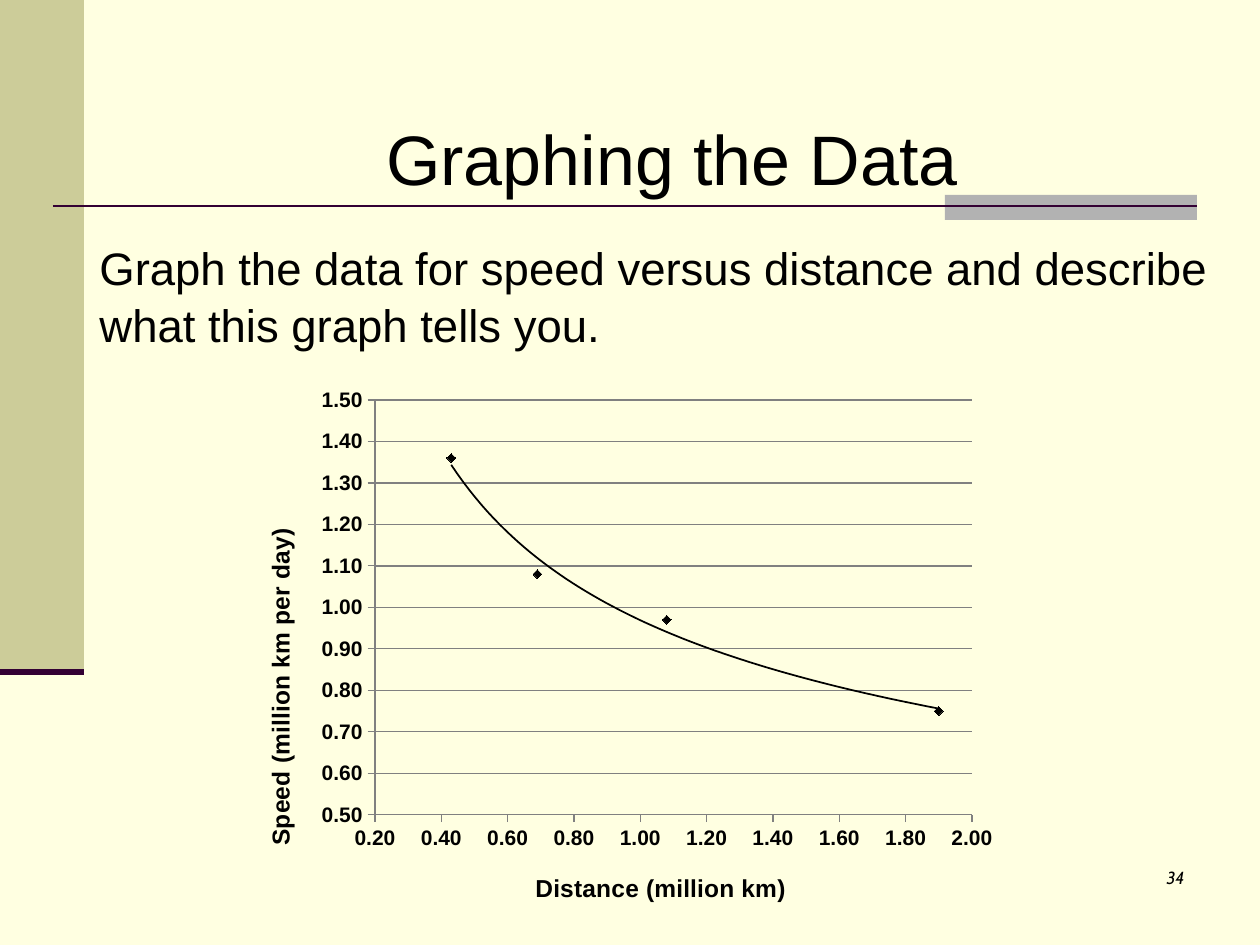
from lxml import etree
from pptx import Presentation
from pptx.chart.data import XyChartData
from pptx.dml.color import RGBColor
from pptx.enum.chart import XL_CHART_TYPE, XL_MARKER_STYLE, XL_TICK_MARK
from pptx.enum.shapes import MSO_CONNECTOR, MSO_SHAPE
from pptx.enum.text import MSO_ANCHOR, PP_ALIGN
from pptx.oxml.ns import qn
from pptx.util import Pt

PX = 914400 // 126
CREAM = RGBColor(0xFF, 0xFF, 0xE1)
KHAKI = RGBColor(0xCC, 0xCC, 0x99)
SILVER = RGBColor(0xB2, 0xB2, 0xB2)
PLUM = RGBColor(0x33, 0x00, 0x33)
GRAY = RGBColor(0x80, 0x80, 0x80)
BLACK = RGBColor(0, 0, 0)
LEFT, CENTER, RIGHT = PP_ALIGN.LEFT, PP_ALIGN.CENTER, PP_ALIGN.RIGHT
TOP, MIDDLE = MSO_ANCHOR.TOP, MSO_ANCHOR.MIDDLE

# Boxes are left, top, width, height in px
BARS = [((0, 0, 84, 672), KHAKI), ((945, 195, 252, 25), SILVER)]
RULES = [((53, 206), (1197, 206), 1.5), ((0, 672), (84, 672), 3.5)]
TEXTS = [
    ("34", (935, 861, 262, 63), RIGHT, TOP, 1,
     dict(name="Cabin", size=Pt(10), italic=True)),
    ("Graph the data for speed versus distance and describe what this graph tells you.",
     (87, 231, 1142, 147), LEFT, TOP, 1.05, dict(name="Arial", size=Pt(26))),
    ("Graphing the Data", (84, 95, 1176, 126), CENTER, MIDDLE, 1,
     dict(name="Arial", size=Pt(40))),
]

CHART_BOX = (242, 378, 766, 546)
PLOT_BOX = (375, 400, 597, 415)
POINTS = [(0.43, 1.36), (0.69, 1.08), (1.08, 0.97), (1.9, 0.75)]
X_AXIS = dict(minimum_scale=0.2, maximum_scale=2, major_unit=0.2,
              has_major_gridlines=False)
Y_AXIS = dict(minimum_scale=0.5, maximum_scale=1.5, major_unit=0.1,
              has_major_gridlines=True)
X_TITLE = ("Distance (million km)", (531, 868))
Y_TITLE = ("Speed (million km per day)", (260, 524))


def emu(values):
    return [v * PX for v in values]


def set_all(obj, values):
    for name, value in values.items():
        setattr(obj, name, value)


def add_bar(slide, box, color):
    s = slide.shapes.add_shape(MSO_SHAPE.RECTANGLE, *emu(box))
    s.shadow.inherit = False
    s.fill.solid()
    s.fill.fore_color.rgb = color
    s.line.fill.background()


def add_rule(slide, start, end, width):
    c = slide.shapes.add_connector(MSO_CONNECTOR.STRAIGHT, *emu(start + end))
    c.line.color.rgb = PLUM
    c.line.width = Pt(width)
    etree.SubElement(c._element.spPr, qn("a:effectLst"))


def add_text(slide, text, box, align, anchor, spacing, font):
    tf = slide.shapes.add_textbox(*emu(box)).text_frame
    set_all(tf, dict(word_wrap=True, vertical_anchor=anchor))
    p = tf.paragraphs[0]
    set_all(p, dict(alignment=align, line_spacing=spacing))
    r = p.add_run()
    r.text = text
    set_all(r.font, font)
    r.font.color.rgb = BLACK


def place(element, box, index):
    """Fix a chart part at a px box (or corner) given on the slide."""
    layout = element.find(qn("c:layout"))
    if layout is None:
        layout = etree.Element(qn("c:layout"))
        element.insert(index, layout)
    manual = etree.SubElement(layout, qn("c:manualLayout"))
    left, top, width, height = CHART_BOX
    values = {"xMode": "edge", "yMode": "edge",
              "x": (box[0] - left) / width, "y": (box[1] - top) / height}
    if len(box) == 4:
        etree.SubElement(manual, qn("c:layoutTarget")).set("val", "inner")
        values.update(w=box[2] / width, h=box[3] / height)
    for tag, value in values.items():
        etree.SubElement(manual, qn("c:" + tag)).set("val", str(value))


def style_axis(axis, scale, title):
    set_all(axis, scale)
    set_all(axis, dict(major_tick_mark=XL_TICK_MARK.OUTSIDE,
                       minor_tick_mark=XL_TICK_MARK.NONE))
    set_all(axis.tick_labels, dict(number_format="0.00",
                                   number_format_is_linked=False))
    set_all(axis.tick_labels.font, dict(size=Pt(12), bold=True))
    lines = [axis.format.line]
    if axis.has_major_gridlines:
        lines.append(axis.major_gridlines.format.line)
    for line in lines:
        line.color.rgb = GRAY
        line.width = Pt(0.75)
    text, corner = title
    r = axis.axis_title.text_frame.paragraphs[0].add_run()
    r.text = text
    set_all(r.font, dict(name="Arial", size=Pt(14), bold=True))
    r.font.color.rgb = BLACK
    place(axis.axis_title._element, corner, 1)


def add_power_trend(series):
    trend = etree.Element(qn("c:trendline"))
    sp_pr = etree.SubElement(trend, qn("c:spPr"))
    ln = etree.SubElement(sp_pr, qn("a:ln"), w=str(Pt(1)))
    fill = etree.SubElement(ln, qn("a:solidFill"))
    etree.SubElement(fill, qn("a:srgbClr"), val=str(BLACK))
    for tag, value in (("trendlineType", "power"), ("dispRSqr", "0"), ("dispEq", "0")):
        etree.SubElement(trend, qn("c:" + tag), val=value)
    series._element.find(qn("c:xVal")).addprevious(trend)


def add_speed_chart(slide):
    data = XyChartData()
    points = data.add_series("Series 1")
    for x, y in POINTS:
        points.add_data_point(x, y)
    chart = slide.shapes.add_chart(
        XL_CHART_TYPE.XY_SCATTER, *emu(CHART_BOX), data).chart
    set_all(chart, dict(has_legend=False, has_title=False))
    set_all(chart.font, dict(name="Arial", size=Pt(10)))
    chart.font.color.rgb = BLACK
    plot = chart.plots[0]
    plot.vary_by_categories = False
    place(plot._element.getparent(), PLOT_BOX, 0)
    style_axis(chart.category_axis, X_AXIS, X_TITLE)
    style_axis(chart.value_axis, Y_AXIS, Y_TITLE)

    series = plot.series[0]
    series.format.line.fill.background()
    marker = series.marker
    set_all(marker, dict(style=XL_MARKER_STYLE.DIAMOND, size=5))
    marker.format.fill.solid()
    marker.format.fill.fore_color.rgb = BLACK
    marker.format.line.color.rgb = BLACK
    add_power_trend(series)


def main():
    prs = Presentation()
    prs.slide_width, prs.slide_height = emu((1260, 945))
    slide = prs.slides.add_slide(prs.slide_layouts[6])
    slide.background.fill.solid()
    slide.background.fill.fore_color.rgb = CREAM
    for bar in BARS:
        add_bar(slide, *bar)
    for rule in RULES:
        add_rule(slide, *rule)
    for text in TEXTS:
        add_text(slide, *text)
    add_speed_chart(slide)
    prs.save("out.pptx")


if __name__ == "__main__":
    main()
